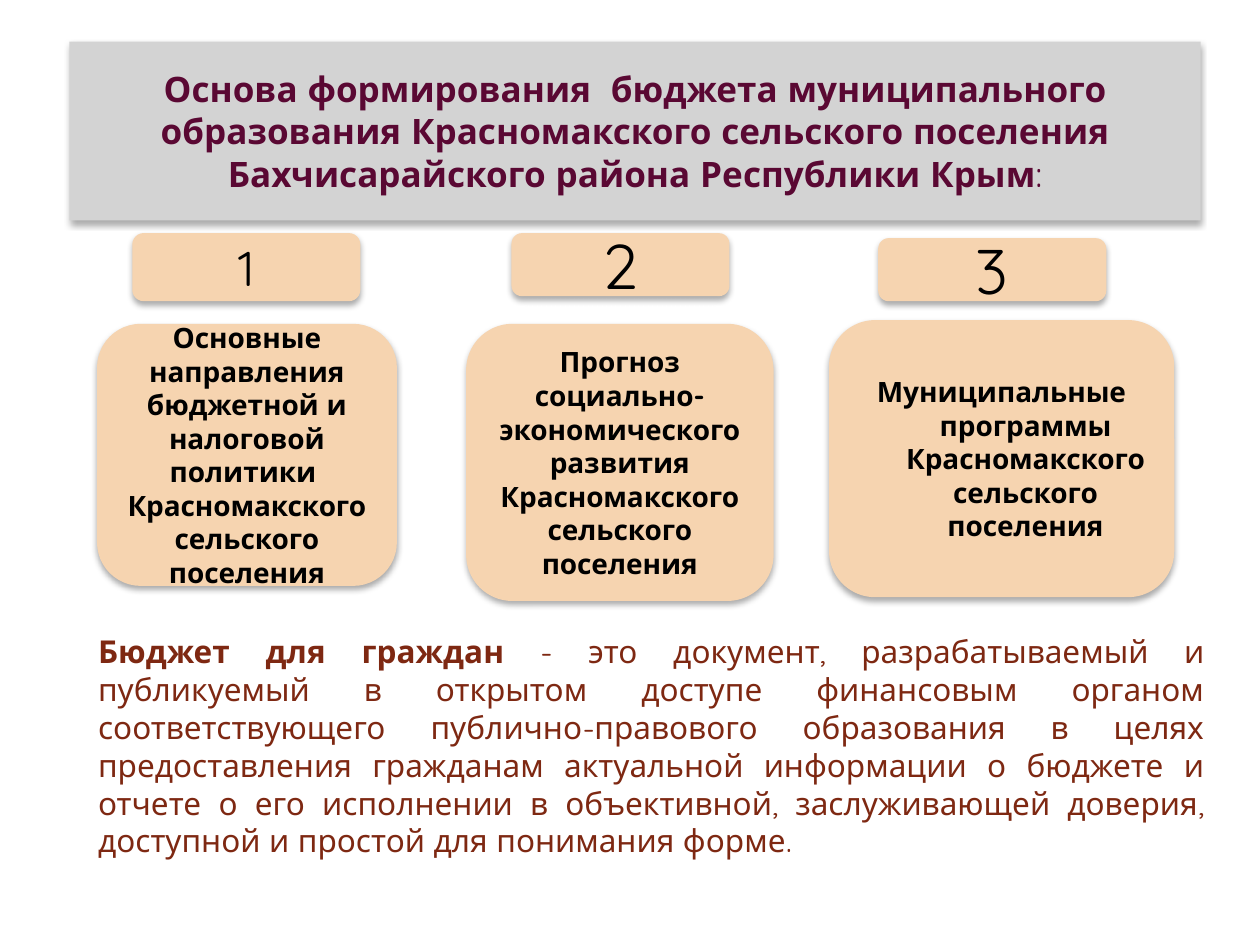
from lxml.etree import SubElement
from pptx import Presentation
from pptx.dml.color import RGBColor
from pptx.enum.shapes import MSO_SHAPE as Preset
from pptx.enum.text import MSO_ANCHOR as Anchor, MSO_AUTO_SIZE as AutoSize, PP_ALIGN as Align
from pptx.oxml.ns import qn
from pptx.util import Inches, Pt

COLORS = {"title": "5A0833", "header": "D3D3D3", "card": "F6D4B0",
          "text": "000000", "definition": "7E2812"}


class BudgetSlide:
    """Style and current slide; areas are (left, top, width, height) in percent of the slide."""

    font = "Quicksand"

    def __init__(self, presentation):
        self.size = presentation.slide_width, presentation.slide_height
        self.slide = presentation.slides.add_slide(presentation.slide_layouts[5])

    def place(self, area):
        return [int(share * self.size[i % 2] / 100) for i, share in enumerate(area)]

    def shade(self, shape, color):
        shape.fill.solid()
        shape.fill.fore_color.rgb = RGBColor.from_string(COLORS[color])
        shape.line.fill.background()
        shape.shadow.inherit = False
        effects = shape._element.spPr.find(qn("a:effectLst"))
        shadow = SubElement(effects, qn("a:outerShdw"), blurRad=str(Pt(3.5)), dist=str(Pt(2.2)),
                            dir="5400000", algn="t", rotWithShape="0")
        black = SubElement(shadow, qn("a:srgbClr"), val="000000")
        SubElement(black, qn("a:alpha"), val="32000")

    def add_text(self, shape, paragraphs, size, color, align=Align.CENTER, anchor=Anchor.MIDDLE,
                 hanging=0):
        frame = shape.text_frame
        frame.word_wrap = True
        frame.auto_size = AutoSize.NONE
        frame.vertical_anchor = anchor
        for index, runs in enumerate(paragraphs):
            paragraph = frame.add_paragraph() if index else frame.paragraphs[0]
            paragraph.alignment = align
            if hanging:
                properties = paragraph._p.get_or_add_pPr()
                properties.set("marL", str(Inches(hanging)))
                properties.set("indent", str(-Inches(hanging)))
            for text, bold in runs:
                run = paragraph.add_run()
                run.text = text
                run.font.name = self.font
                run.font.size = Pt(size)
                run.font.bold = bold
                run.font.color.rgb = RGBColor.from_string(COLORS[color])

    def title(self, area, runs):
        title = self.slide.shapes.title
        title.left, title.top, title.width, title.height = self.place(area)
        geometry = SubElement(title._element.spPr, qn("a:prstGeom"), prst="roundRect")
        SubElement(geometry, qn("a:avLst"))
        self.shade(title, "header")
        self.add_text(title, [runs], 20, "title")

    def card(self, area, lines, size=16, bold=True, hanging=0):
        card = self.slide.shapes.add_shape(Preset.ROUNDED_RECTANGLE, *self.place(area))
        self.shade(card, "card")
        self.add_text(card, [[(line, bold)] for line in lines], size, "text", hanging=hanging)

    def definition(self, area, runs):
        box = self.slide.shapes.add_textbox(*self.place(area))
        self.add_text(box, [runs], 18, "definition", Align.JUSTIFY, Anchor.TOP)


def main():
    presentation = Presentation()
    presentation.slide_width, presentation.slide_height = Inches(10), Inches(7.5)
    slide = BudgetSlide(presentation)
    slide.title((5.5, 4.4, 89.8, 18.93), [
        ("Основа формирования  бюджета муниципального образования Красномакского сельского "
         "поселения Бахчисарайского района Республики Крым", True), (":", False)])

    numbers = [((10.5, 24.67, 18.1, 7.2), 27.9),
               ((40.6, 24.67, 17.3, 6.67), 36),
               ((69.7, 25.2, 18.1, 6.67), 36)]
    for number, (area, size) in enumerate(numbers, 1):
        slide.card(area, [str(number)], size, bold=False)

    foundations = [
        ((7.7, 34.27, 23.8, 27.73), 0,
         ["Основные", "направления", "бюджетной и", "налоговой",
          "политики  Красномакского сельского поселения"]),
        ((37, 34.27, 24.4, 29.33), 0,
         ["Прогноз социально-экономического развития Красномакского сельского поселения"]),
        ((65.8, 33.87, 27.4, 29.33), 0.38,
         ["Муниципальные программы Красномакского сельского поселения"])]
    for area, hanging, lines in foundations:
        slide.card(area, lines, hanging=hanging)

    slide.definition((6.8, 66.27, 89.8, 31.33), [
        ("Бюджет для граждан ", True),
        ("- это документ, разрабатываемый и публикуемый в открытом доступе финансовым органом "
         "соответствующего публично-правового образования в целях предоставления гражданам "
         "актуальной информации о бюджете и отчете о его исполнении в объективной, "
         "заслуживающей доверия, доступной и простой для понимания форме.", False)])
    presentation.save("out.pptx")


if __name__ == "__main__":
    main()
